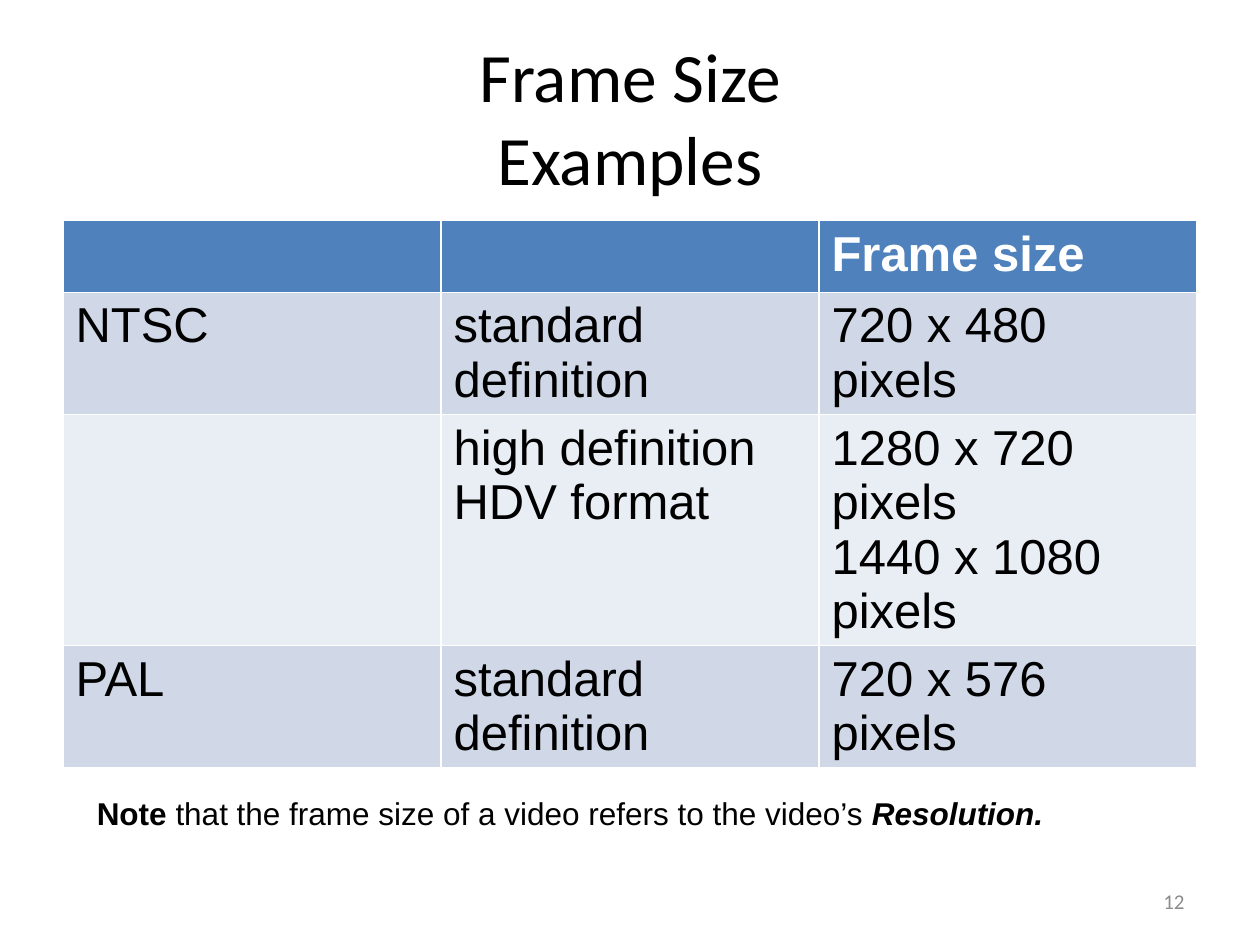
from dataclasses import dataclass

from pptx import Presentation
from pptx.dml.color import RGBColor
from pptx.enum.text import MSO_ANCHOR, MSO_AUTO_SIZE, PP_ALIGN
from pptx.util import Inches, Pt


@dataclass(frozen=True)
class Theme:
    head: str = "Calibri"
    body: str = "Arial"
    black: str = "000000"
    white: str = "FFFFFF"
    gray: str = "8C8C8C"
    blue: str = "4F81BD"
    bands: tuple = ("D0D8E8", "E9EDF4")
    title: float = 39.6
    cell: float = 28
    note: float = 18
    page: float = 12


THEME = Theme()

ROWS = [
    (0.57, ["", "", "Frame size"]),
    (0.97, ["NTSC", "standard definition", "720 x 480 pixels"]),
    (1.83, ["", "high definition HDV format", "1280 x 720 pixels\n1440 x 1080 pixels"]),
    (0.97, ["PAL", "standard definition", "720 x 576 pixels"]),
]
NOTE = [
    ("Note", True, False),
    (" that the frame size of a video refers to the video’s ", False, False),
    ("Resolution.", True, True),
]


def style(para, face, size, color, bold=False):
    font = para.font
    font.name = face
    font.size = Pt(size)
    font.bold = bold
    font.color.rgb = RGBColor.from_string(color)


def place(shape, box):
    shape.left, shape.top, shape.width, shape.height = map(Inches, box)


def add_title(slide, box):
    title = slide.shapes.title
    place(title, box)
    frame = title.text_frame
    frame.text = "Frame Size\vExamples"
    frame.auto_size = MSO_AUTO_SIZE.NONE
    frame.vertical_anchor = MSO_ANCHOR.MIDDLE
    para = frame.paragraphs[0]
    para.alignment = PP_ALIGN.CENTER
    style(para, THEME.head, THEME.title, THEME.black)


def add_grid(slide, box):
    count = len(ROWS[0][1])
    table = slide.shapes.add_table(len(ROWS), count, *map(Inches, box)).table
    for col in table.columns:
        col.width = Inches(box[2] / count)
    for i, (height, texts) in enumerate(ROWS):
        table.rows[i].height = Inches(height)
        top = i == 0
        fill = THEME.blue if top else THEME.bands[(i - 1) % 2]
        color = THEME.white if top else THEME.black
        for cell, text in zip(table.rows[i].cells, texts):
            cell.text = text
            cell.fill.solid()
            cell.fill.fore_color.rgb = RGBColor.from_string(fill)
            for para in cell.text_frame.paragraphs:
                style(para, THEME.body, THEME.cell, color, top)


def add_note(slide, box):
    frame = slide.shapes.add_textbox(*map(Inches, box)).text_frame
    frame.word_wrap = True
    para = frame.paragraphs[0]
    style(para, THEME.body, THEME.note, THEME.black)
    for text, bold, slant in NOTE:
        run = para.add_run()
        run.text = text
        run.font.bold = bold
        run.font.italic = slant


def add_page(slide, box):
    frame = slide.shapes.add_textbox(*map(Inches, box)).text_frame
    frame.word_wrap = True
    frame.vertical_anchor = MSO_ANCHOR.MIDDLE
    para = frame.paragraphs[0]
    para.text = "12"
    para.alignment = PP_ALIGN.RIGHT
    style(para, THEME.head, THEME.page, THEME.gray)


def main():
    deck = Presentation()
    deck.slide_width, deck.slide_height = Inches(10), Inches(7.5)
    slide = deck.slides.add_slide(deck.slide_layouts[5])
    add_title(slide, (0.5, 0.3, 9, 1.25))
    add_grid(slide, (0.5, 1.75, 9, 4.34))
    add_page(slide, (7.17, 6.95, 2.33, 0.4))
    add_note(slide, (0.67, 6.25, 8.83, 0.4))
    deck.save("out.pptx")


if __name__ == "__main__":
    main()
